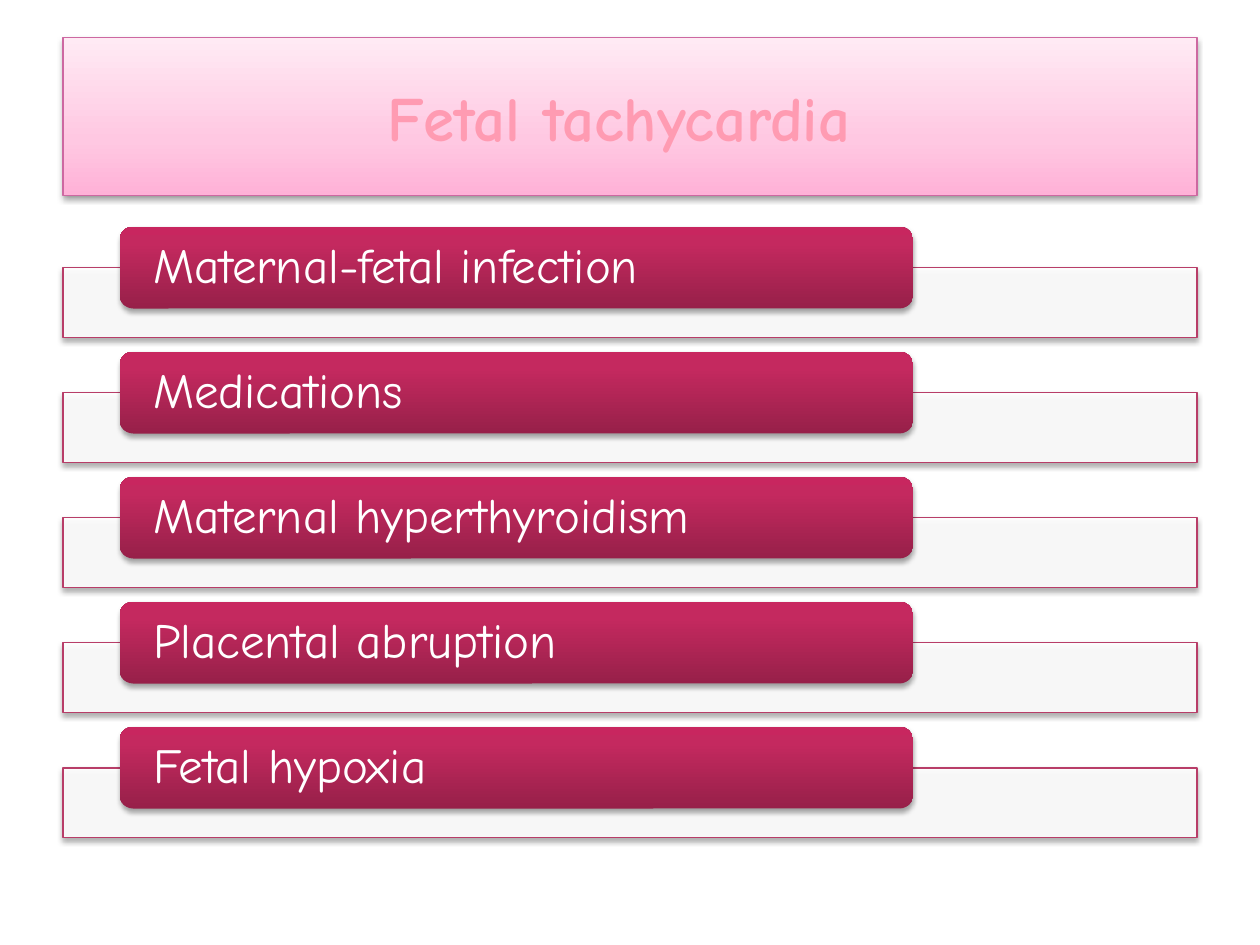
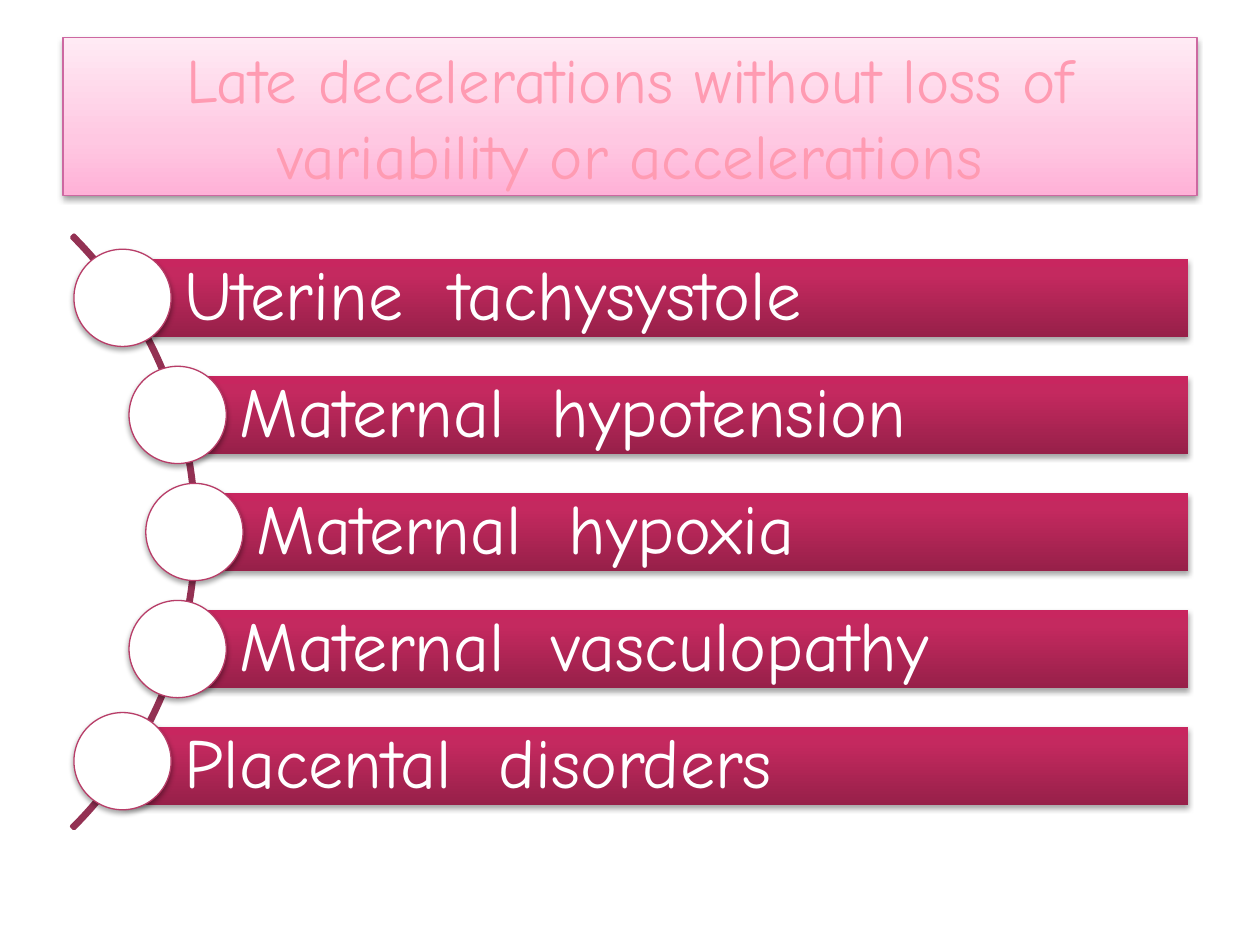
from math import sqrt

from lxml import etree
from pptx import Presentation
from pptx import util as u
from pptx.dml.color import RGBColor
from pptx.enum import shapes, text
from pptx.oxml.ns import qn

TACHYCARDIA = {
    "title": "Fetal tachycardia ",
    "bold": True,
    "causes": [
        "Maternal-fetal infection",
        "Medications",
        "Maternal hyperthyroidism",
        "Placental abruption",
        "Fetal hypoxia",
    ],
}
DECELERATIONS = {
    "title": "Late decelerations without loss of variability or accelerations",
    "bold": False,
    "causes": [
        ("Uterine  tachysystole", 0),
        ("Maternal  hypotension", 0),
        ("Maternal  hypoxia", 0),
        ("Maternal  vasculopathy", 0),
        ("Placental  disorders", -0.1),
    ],
}

FONT = "Comic Neue"
BLACK = RGBColor(0x00, 0x00, 0x00)
WHITE = RGBColor(0xFF, 0xFF, 0xFF)
TITLE_TEXT = RGBColor(0xFF, 0x9B, 0xB2)
TITLE_EDGE = RGBColor(0xCD, 0x68, 0xA1)
CRIMSON_EDGE = RGBColor(0xB8, 0x3D, 0x68)
ARC_EDGE = RGBColor(0x93, 0x31, 0x53)
TITLE_GRADIENT = [
    (0, RGBColor(0xFF, 0xB1, 0xD7)),
    (35, RGBColor(0xFF, 0xC8, 0xE2)),
    (100, RGBColor(0xFF, 0xEA, 0xF4)),
]
BAR_GRADIENT = [
    (0, RGBColor(0x97, 0x20, 0x49)),
    (80, RGBColor(0xC4, 0x29, 0x5F)),
    (100, RGBColor(0xC8, 0x26, 0x5F)),
]

SLIDE_WIDTH, SLIDE_HEIGHT = 25.4, 19.05
MARGIN = 1.27
CONTENT_WIDTH = SLIDE_WIDTH - 2 * MARGIN

PANEL_TOP, PANEL_HEIGHT, PANEL_PITCH = 5.4, 1.4, 2.52
TAB_LEFT, TAB_WIDTH, TAB_HEIGHT, TAB_RISE = 2.41, 16, 1.65, 0.83

BAR_TOP, BAR_HEIGHT, BAR_PITCH, BAR_RIGHT = 5.22, 1.57, 2.36, 23.95
CIRCLE_SIZE = 1.96
ARC_CENTER_X, ARC_SIZE, CIRCLE_ORBIT = -4.49, 16.92, 8.41

KINDS = shapes.MSO_SHAPE


def set_attributes(target, values):
    for name, value in values.items():
        setattr(target, name, value)


def add_color(parent, color, alpha=None):
    element = etree.SubElement(parent, qn("a:srgbClr"), val=str(color))
    if alpha is not None:
        etree.SubElement(element, qn("a:alpha"), val=str(alpha * 1000))


def fill_gradient(shape, stops):
    shape.fill.gradient()
    shape.fill.gradient_angle = 90
    stop_list = shape._element.spPr.find(".//" + qn("a:gsLst"))
    for stop in list(stop_list):
        stop_list.remove(stop)
    for position, color in stops:
        add_color(etree.SubElement(stop_list, qn("a:gs"), pos=str(position * 1000)), color)


def fill_solid(shape, color, alpha=None):
    shape.fill.solid()
    shape.fill.fore_color.rgb = color
    if alpha is not None:
        element = shape._element.spPr.find(qn("a:solidFill")).find(qn("a:srgbClr"))
        etree.SubElement(element, qn("a:alpha"), val=str(alpha * 1000))


def add_shadow(shape, opacity, distance):
    effects = shape._element.spPr.find(qn("a:effectLst"))
    shadow = etree.SubElement(
        effects, qn("a:outerShdw"), blurRad=str(u.Pt(3.1)),
        dist=str(u.Pt(distance)), dir="5400000", rotWithShape="0")
    add_color(shadow, BLACK, opacity)


def add_shape(slide, kind, left, top, width, height, edge=None, edge_width=0.75):
    shape = slide.shapes.add_shape(kind, *map(u.Cm, (left, top, width, height)))
    shape.shadow.inherit = False
    if edge is None:
        shape.line.fill.background()
    else:
        shape.line.color.rgb = edge
        shape.line.width = u.Pt(edge_width)
    return shape


def write(shape, words, size, color, alignment, frame_format, bold=False, spacing=1.0):
    frame = shape.text_frame
    set_attributes(frame, {"word_wrap": True, "vertical_anchor": text.MSO_ANCHOR.MIDDLE,
                           **frame_format})
    paragraph = frame.paragraphs[0]
    set_attributes(paragraph, {"alignment": alignment, "line_spacing": spacing})
    run = paragraph.add_run()
    run.text = words
    set_attributes(run.font, {"name": FONT, "size": u.Pt(size), "bold": bold})
    run.font.color.rgb = color


def add_titled_slide(presentation, content):
    slide = presentation.slides.add_slide(presentation.slide_layouts[6])
    title = add_shape(slide, KINDS.RECTANGLE, MARGIN, 0.76, CONTENT_WIDTH, 3.18, TITLE_EDGE)
    fill_gradient(title, TITLE_GRADIENT)
    add_shadow(title, 38, 1.6)
    write(title, content["title"], 36, TITLE_TEXT, text.PP_ALIGN.CENTER, {}, content["bold"])
    return slide


def add_bar(slide, kind, box, words, size, inset, vertical_inset):
    bar = add_shape(slide, kind, *box)
    fill_gradient(bar, BAR_GRADIENT)
    add_shadow(bar, 35, 1.8)
    frame_format = {"margin_left": u.Cm(inset), "margin_right": u.Cm(0.28),
                    "margin_top": u.Cm(vertical_inset), "margin_bottom": u.Cm(vertical_inset)}
    write(bar, words, size, WHITE, text.PP_ALIGN.LEFT, frame_format, spacing=0.9)


def build_tachycardia(presentation):
    slide = add_titled_slide(presentation, TACHYCARDIA)
    for index, cause in enumerate(TACHYCARDIA["causes"]):
        top = PANEL_TOP + index * PANEL_PITCH
        panel = add_shape(slide, KINDS.RECTANGLE, MARGIN, top, CONTENT_WIDTH, PANEL_HEIGHT,
                          CRIMSON_EDGE)
        fill_solid(panel, WHITE, 90)
        add_shadow(panel, 35, 1.8)
        box = TAB_LEFT, top - TAB_RISE, TAB_WIDTH, TAB_HEIGHT
        add_bar(slide, KINDS.ROUNDED_RECTANGLE, box, cause, 28, 0.6, 0)


def build_decelerations(presentation):
    slide = add_titled_slide(presentation, DECELERATIONS)
    causes = DECELERATIONS["causes"]
    arc_center_y = BAR_TOP + (len(causes) - 1) / 2 * BAR_PITCH + BAR_HEIGHT / 2
    arc = add_shape(slide, KINDS.BLOCK_ARC, ARC_CENTER_X - ARC_SIZE / 2,
                    arc_center_y - ARC_SIZE / 2, ARC_SIZE, ARC_SIZE, ARC_EDGE, 2)
    arc.fill.background()
    for index, value in enumerate((189, 27, 0.004)):
        arc.adjustments[index] = value

    for index, (cause, circle_shift) in enumerate(causes):
        top = BAR_TOP + index * BAR_PITCH
        center_y = top + BAR_HEIGHT / 2
        left = ARC_CENTER_X + sqrt(CIRCLE_ORBIT ** 2 - (center_y - arc_center_y) ** 2)
        box = left, top, BAR_RIGHT - left, BAR_HEIGHT
        add_bar(slide, KINDS.RECTANGLE, box, cause, 40, 1.25, 0.28)
        circle = add_shape(slide, KINDS.OVAL, left - CIRCLE_SIZE / 2,
                           center_y - CIRCLE_SIZE / 2 + circle_shift,
                           CIRCLE_SIZE, CIRCLE_SIZE, CRIMSON_EDGE)
        fill_solid(circle, WHITE)
        add_shadow(circle, 35, 1.8)


def main():
    presentation = Presentation()
    set_attributes(presentation, {"slide_width": u.Cm(SLIDE_WIDTH),
                                  "slide_height": u.Cm(SLIDE_HEIGHT)})
    build_tachycardia(presentation)
    build_decelerations(presentation)
    presentation.save("out.pptx")


if __name__ == "__main__":
    main()
